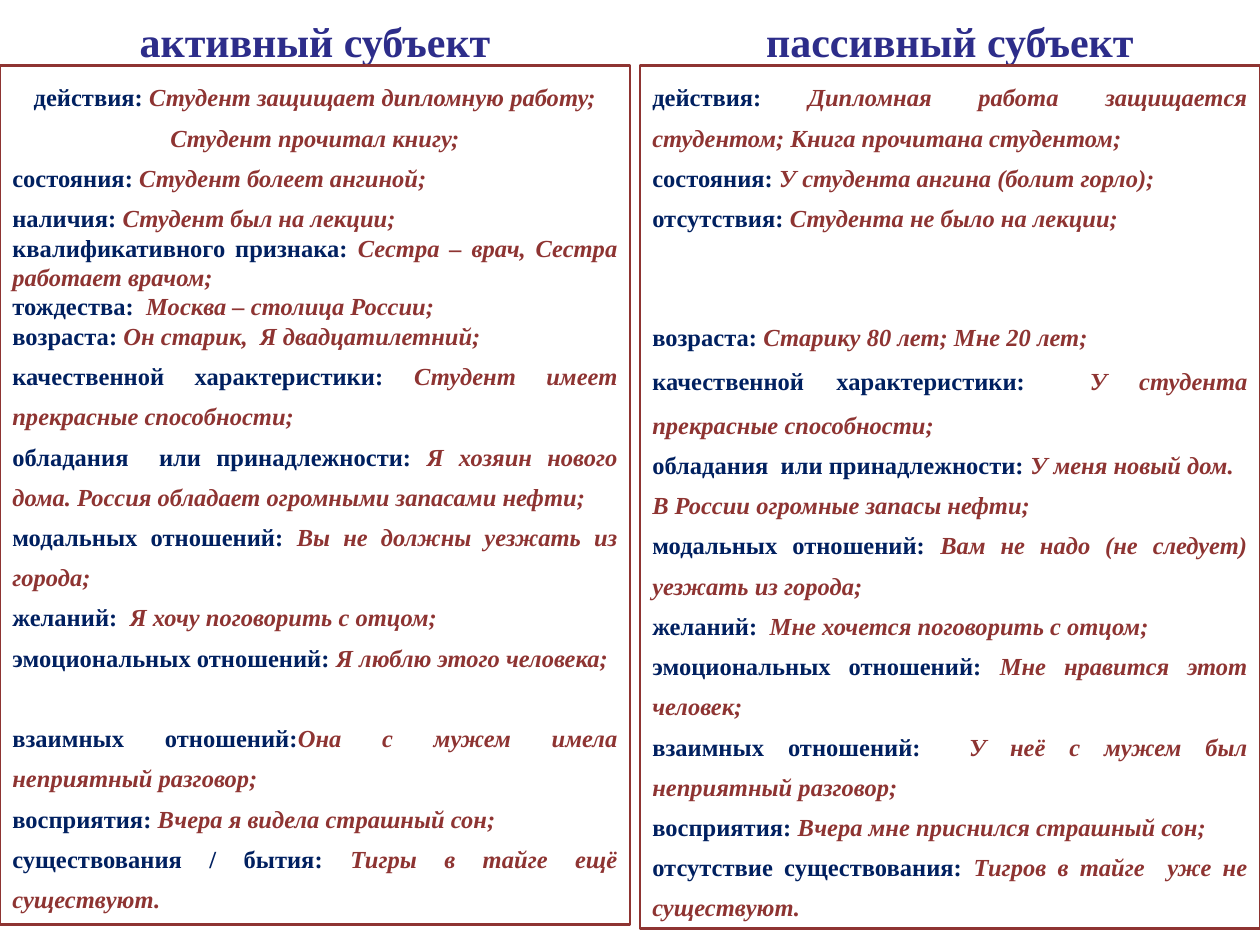
from pptx import Presentation
from pptx import util as u
from pptx.dml.color import RGBColor
from pptx.enum import shapes, text

FONT = "Times New Roman"
HEADING, TERM, EXAMPLE = "2D2D8A", "002060", "8E3432"
WIDE, TIGHT = 23, 16.8
JUSTIFY, CENTER = text.PP_ALIGN.JUSTIFY, text.PP_ALIGN.CENTER

ACTIVE = [
    ("действия: ", "Студент защищает дипломную работу; Студент прочитал книгу;", {"align": CENTER}),
    ("состояния: ", "Студент болеет ангиной;", {}),
    ("наличия: ", "Студент был на лекции;", {}),
    ("квалификативного признака: ", "Сестра ‒ врач, Сестра работает врачом;", {"line": TIGHT}),
    ("тождества:  ", "Москва – столица России;", {"line": TIGHT}),
    ("возраста:", " Он старик,  Я двадцатилетний;", {"line": TIGHT}),
    ("качественной характеристики: ", "Студент имеет прекрасные способности;", {}),
    ("обладания  или принадлежности: ",
     "Я хозяин нового дома. Россия обладает огромными запасами нефти;", {}),
    ("модальных отношений:", " Вы не должны уезжать из города;", {}),
    ("желаний:  ", "Я хочу поговорить с отцом;", {}),
    ("эмоциональных отношений: ", "Я люблю этого человека;", {}),
    ("взаимных отношений:", "Она с мужем имела неприятный разговор;", {"before": 23}),
    ("восприятия:", " Вчера я видела страшный сон;", {}),
    ("существования / бытия:", " Тигры в тайге ещё существуют.", {}),
]

PASSIVE = [
    ("действия: ", "Дипломная работа защищается студентом; Книга прочитана студентом;", {}),
    ("состояния: ", "У студента ангина (болит горло);", {}),
    ("отсутствия:", " Студента не было на лекции;", {}),
    ("возраста: ", "Старику 80 лет; Мне 20 лет;", {"before": 45}),
    ("качественной характеристики:  ", "У студента прекрасные способности;", {"line": 25}),
    ("обладания  или принадлежности: ", "У меня новый дом.", {}),
    ("", "В России огромные запасы нефти;", {}),
    ("модальных отношений: ", "Вам не надо (не следует) уезжать из города;", {}),
    ("желаний:  ", "Мне хочется поговорить с отцом;", {}),
    ("эмоциональных отношений: ", "Мне нравится этот человек;", {}),
    ("взаимных отношений:  ", "У неё с мужем был неприятный разговор;", {}),
    ("восприятия: ", "Вчера мне приснился страшный сон;", {}),
    ("отсутствие существования: ", "Тигров в тайге  уже не существуют.", {}),
]


def color(value):
    """Turn a hex string into a colour."""
    return RGBColor.from_string(value)


def style(font, size, value, italic=False):
    """Apply the bold serif type of the slide."""
    font.name, font.size = FONT, u.Pt(size)
    font.bold, font.italic = True, italic
    font.color.rgb = color(value)


def add_heading(slide, title, left, top, width, height):
    """Place a centred heading at the bottom of its box."""
    frame = slide.shapes.add_textbox(left, top, width, height).text_frame
    frame.word_wrap = True
    frame.vertical_anchor = text.MSO_ANCHOR.BOTTOM
    frame.text = title
    paragraph = frame.paragraphs[0]
    paragraph.alignment = CENTER
    style(paragraph.runs[0].font, 24, HEADING)


def add_entry(paragraph, term, example, align=JUSTIFY, line=WIDE, before=0):
    """Write a term and its example in one paragraph."""
    paragraph.alignment = align
    paragraph.line_spacing = u.Pt(line)
    paragraph.space_before = u.Pt(before)
    for words, value, italic in ((term, TERM, False), (example, EXAMPLE, True)):
        if words:
            run = paragraph.add_run()
            run.text = words
            style(run.font, 14, value, italic)


def add_entries(slide, entries, left, top, width, height):
    """Draw the framed list of entries."""
    shape = slide.shapes.add_shape(shapes.MSO_SHAPE.RECTANGLE, left, top, width, height)
    shape.shadow.inherit = False
    shape.fill.background()
    shape.line.color.rgb = color(EXAMPLE)
    shape.line.width = u.Pt(1.5)
    frame = shape.text_frame
    frame.word_wrap = True
    frame.vertical_anchor = text.MSO_ANCHOR.TOP
    for index, (term, example, layout) in enumerate(entries):
        paragraph = frame.add_paragraph() if index else frame.paragraphs[0]
        add_entry(paragraph, term, example, **layout)


def add_column(slide, title, entries, left, width, height, indent=0):
    """Place a heading above its framed list."""
    add_heading(slide, title, left + indent, 0, width - 2 * indent, u.Cm(1.45))
    add_entries(slide, entries, left, u.Cm(1.32), width, height)


def main():
    """Build and save the slide."""
    presentation = Presentation()
    presentation.slide_width, presentation.slide_height = u.Cm(25.4), u.Cm(19.05)
    slide = presentation.slides.add_slide(presentation.slide_layouts[6])
    add_column(slide, "активный субъект", ACTIVE, 0, u.Cm(12.7), u.Cm(17.32), u.Cm(0.15))
    add_column(slide, "пассивный субъект", PASSIVE, u.Cm(12.9), u.Cm(12.5), u.Cm(17.4))
    presentation.save("out.pptx")


if __name__ == "__main__":
    main()
